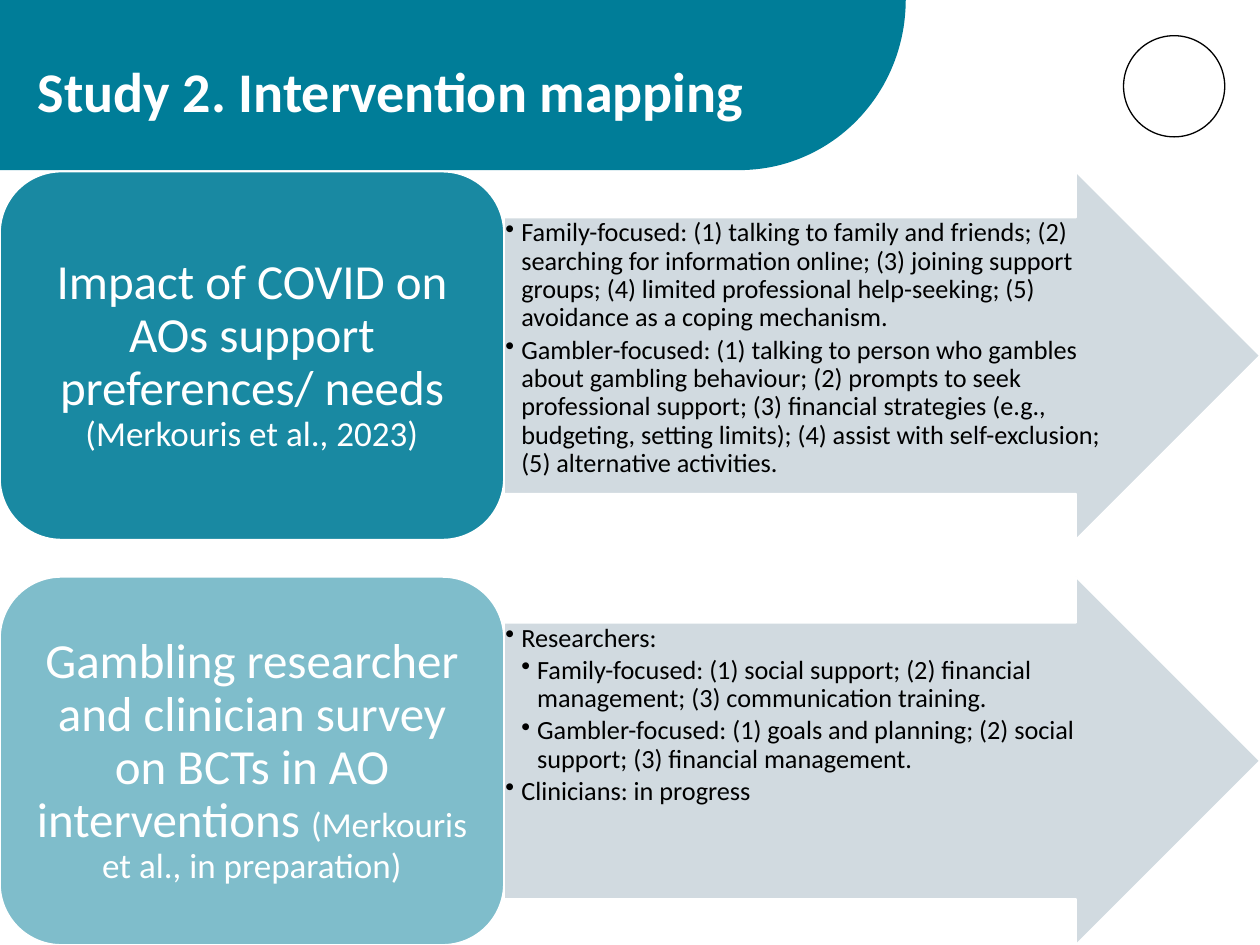
from dataclasses import dataclass
from math import cos, pi, sin

from lxml.etree import SubElement
from pptx import Presentation
from pptx.dml.color import RGBColor
from pptx.enum.shapes import MSO_SHAPE as Shape
from pptx.enum.text import MSO_ANCHOR as Anchor, PP_ALIGN as Align
from pptx.oxml.ns import qn
from pptx.util import Cm, Pt

COLOURS = {"teal": "007D98", "grey": "CCD7DD", "white": "FFFFFF", "black": "000000"}
SLIDE_WIDTH, SLIDE_HEIGHT = 25.4, 19.05
CARD_WIDTH, ROW_HEIGHT = 10.16, 7.42
ROW_TOPS = (3.46, SLIDE_HEIGHT - ROW_HEIGHT)
CARD_PADDING = 0.36
ARROW_BODY = 0.75
BULLET_INDENT = 0.32


@dataclass
class Point:
    text: str
    level: int = 1


@dataclass
class Row:
    heading: str
    citation: str
    opacity: int
    points: list[Point]


ROWS = [
    Row("Impact of COVID on AOs support preferences/ needs ", "(Merkouris et al., 2023)", 90, [
        Point("Family-focused: (1) talking to family and friends; (2) searching for information "
              "online; (3) joining support groups; (4) limited professional help-seeking; "
              "(5) avoidance as a coping mechanism."),
        Point("Gambler-focused: (1) talking to person who gambles about gambling behaviour; "
              "(2) prompts to seek professional support; (3) financial strategies (e.g., "
              "budgeting, setting limits); (4) assist with self-exclusion; "
              "(5) alternative activities."),
    ]),
    Row("Gambling researcher and clinician survey on BCTs in AO interventions ",
        "(Merkouris et al., in preparation)", 50, [
            Point("Researchers:"),
            Point("Family-focused: (1) social support; (2) financial management; "
                  "(3) communication training.", 2),
            Point("Gambler-focused: (1) goals and planning; (2) social support; "
                  "(3) financial management.", 2),
            Point("Clinicians: in progress"),
        ]),
]


def apply_format(target, values: dict) -> None:
    for name, value in values.items():
        setattr(target, name, value)


def colour(name: str) -> RGBColor:
    return RGBColor.from_string(COLOURS[name])


def fill_shape(shape, name: str, opacity: int = 100) -> None:
    shape.shadow.inherit = False
    shape.fill.solid()
    shape.fill.fore_color.rgb = colour(name)
    if opacity < 100:
        tone = shape.fill._xPr.find(qn("a:solidFill"))[0]
        SubElement(tone, qn("a:alpha"), val=str(opacity * 1000))


def add_block(page, kind, left: float, top: float, width: float, name: str, opacity: int):
    block = page.shapes.add_shape(kind, Cm(left), Cm(top), Cm(width), Cm(ROW_HEIGHT))
    fill_shape(block, name, opacity)
    block.line.color.rgb = colour("white")
    block.line.width = Pt(1)
    return block


def add_box(page, left: float, top: float, width: float, height: float,
            inset_x: float, inset_y: float, anchor=Anchor.TOP):
    frame = page.shapes.add_textbox(Cm(left), Cm(top), Cm(width), Cm(height)).text_frame
    apply_format(frame, {
        "word_wrap": True, "vertical_anchor": anchor,
        "margin_left": Cm(inset_x), "margin_right": Cm(inset_x),
        "margin_top": Cm(inset_y), "margin_bottom": Cm(inset_y),
    })
    return frame


def add_span(para, text: str, size: int, name: str, bold: bool = False) -> None:
    span = para.add_run()
    span.text = text
    apply_format(span.font, {"name": "Calibri", "size": Pt(size), "bold": bold})
    span.font.color.rgb = colour(name)


def add_bullet(para, level: int) -> None:
    properties = para._p.get_or_add_pPr()
    properties.set("marL", str(Cm(BULLET_INDENT * level)))
    properties.set("indent", str(-Cm(BULLET_INDENT)))
    SubElement(properties, qn("a:buChar"), char="•")


def draw_banner(page) -> None:
    centre_x, radius_x, radius_y, steps = 14.91, 3.35, 3.43, 48
    angles = [pi / 2 * step / steps for step in range(steps + 1)]
    curve = [(Cm(centre_x + radius_x * cos(angle)), Cm(radius_y * sin(angle)))
             for angle in angles]
    builder = page.shapes.build_freeform(0, 0)
    builder.add_line_segments(curve + [(0, Cm(radius_y))], close=True)
    banner = builder.convert_to_shape()
    fill_shape(banner, "teal")
    banner.line.fill.background()


def draw_ring(page) -> None:
    ring = page.shapes.add_shape(Shape.OVAL, Cm(22.65), Cm(0.72), Cm(2.04), Cm(2.04))
    ring.shadow.inherit = False
    ring.fill.background()
    ring.line.color.rgb = colour("black")
    ring.line.width = Pt(0.75)


def draw_title(page) -> None:
    para = add_box(page, 0.51, 1.17, 17.75, 2.26, 0.25, 0.13).paragraphs[0]
    para.line_spacing = 0.9
    add_span(para, "Study 2. Intervention mapping", 32, "white", True)


def draw_arrow(page, row: Row, top: float) -> None:
    arrow = add_block(page, Shape.RIGHT_ARROW, CARD_WIDTH, top,
                      SLIDE_WIDTH - CARD_WIDTH, "grey", 90)
    arrow.adjustments[0] = ARROW_BODY
    arrow.adjustments[1] = 0.5
    body_top = top + ROW_HEIGHT * (1 - ARROW_BODY) / 2
    frame = add_box(page, CARD_WIDTH, body_top, 12.45, ROW_HEIGHT * ARROW_BODY, 0.03, 0.03)
    for index, point in enumerate(row.points):
        para = frame.add_paragraph() if index else frame.paragraphs[0]
        add_bullet(para, point.level)
        apply_format(para, {"level": point.level, "line_spacing": 0.9, "space_after": Pt(2.2)})
        add_span(para, point.text, 15, "black")


def draw_card(page, row: Row, top: float) -> None:
    add_block(page, Shape.ROUNDED_RECTANGLE, 0, top, CARD_WIDTH, "teal", row.opacity)
    frame = add_box(page, CARD_PADDING, top + CARD_PADDING, CARD_WIDTH - 2 * CARD_PADDING,
                    ROW_HEIGHT - 2 * CARD_PADDING, 0.3, 0.15, Anchor.MIDDLE)
    para = frame.paragraphs[0]
    apply_format(para, {"alignment": Align.CENTER, "line_spacing": 0.9})
    add_span(para, row.heading, 28, "white")
    add_span(para, row.citation, 20, "white")


def main() -> None:
    deck = Presentation()
    apply_format(deck, {"slide_width": Cm(SLIDE_WIDTH), "slide_height": Cm(SLIDE_HEIGHT)})
    page = deck.slides.add_slide(deck.slide_layouts[6])
    draw_banner(page)
    draw_ring(page)
    draw_title(page)
    for row, top in zip(ROWS, ROW_TOPS):
        draw_arrow(page, row, top)
        draw_card(page, row, top)
    deck.save("out.pptx")


if __name__ == "__main__":
    main()
